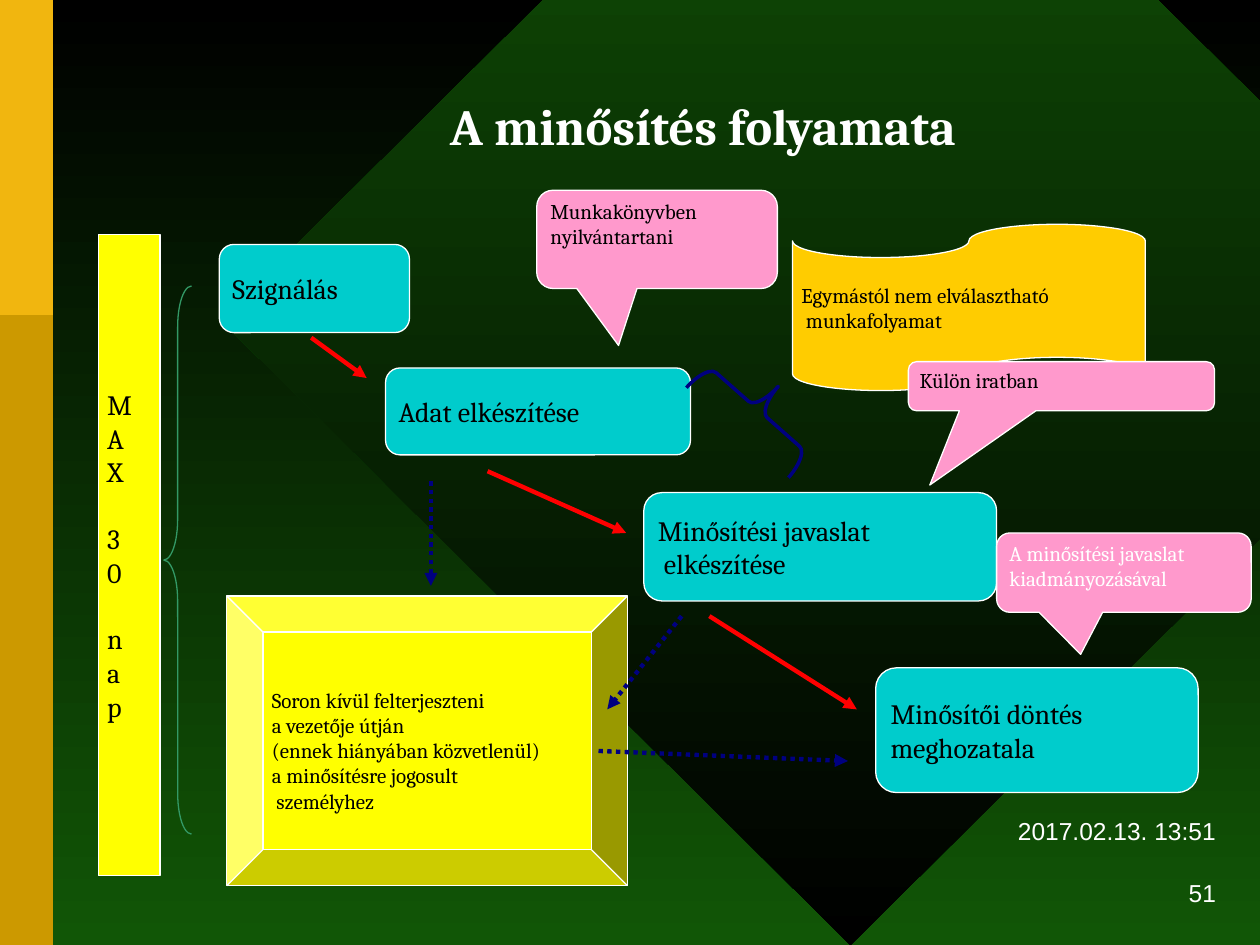
from lxml import etree
from pptx import Presentation
from pptx.dml.color import RGBColor
from pptx.enum.dml import MSO_LINE
from pptx.enum.shapes import MSO_CONNECTOR, MSO_SHAPE as Kind
from pptx.enum.text import MSO_ANCHOR as Anchor, PP_ALIGN as Align
from pptx.oxml.ns import qn
from pptx.util import Inches, Pt

COLORS = {
    "white": "FFFFFF", "black": "000000", "green": "115606",
    "ochre": "CC9900", "amber": "F1B60F", "teal": "00CCCC",
    "yellow": "FFFF00", "gold": "FFCC00", "pink": "FF99CC",
    "red": "FF0000", "navy": "000080", "brace": "339966",
}


def rgb(name):
    return RGBColor.from_string(COLORS[name])


def fill_gradient(fill, top, bottom):
    fill.gradient()
    fill.gradient_angle = 270
    for stop, color in zip(fill.gradient_stops, (top, bottom)):
        stop.color.rgb = rgb(color)


def add_box(slide, kind, box, fill=None, line=None, width=0.75, adjustments=()):
    shape = slide.shapes.add_shape(kind, *map(Inches, box))
    shape.shadow.inherit = False
    if fill:
        shape.fill.solid()
        shape.fill.fore_color.rgb = rgb(fill)
    else:
        shape.fill.background()
    if line:
        shape.line.color.rgb = rgb(line)
        shape.line.width = Pt(width)
    else:
        shape.line.fill.background()
    for index, value in enumerate(adjustments):
        shape.adjustments[index] = value
    return shape


def write_text(shape, lines, size, color="black", font="Cambria", bold=False,
               align=Align.LEFT, anchor=Anchor.MIDDLE, wrap=False, margins=(0.07, 0.03)):
    """Write one paragraph for each line, with the same format throughout."""
    frame = shape.text_frame
    frame.word_wrap = wrap
    frame.vertical_anchor = anchor
    frame.margin_left = frame.margin_right = Inches(margins[0])
    frame.margin_top = frame.margin_bottom = Inches(margins[1])
    for index, line in enumerate(lines):
        paragraph = frame.add_paragraph() if index else frame.paragraphs[0]
        paragraph.alignment = align
        run = paragraph.add_run()
        run.text = line
        run.font.size = Pt(size)
        run.font.name = font
        run.font.bold = bold
        run.font.color.rgb = rgb(color)
    return frame


def add_backdrop(slide, width, height):
    fill_gradient(slide.background.fill, "black", "green")
    diamond = add_box(slide, Kind.DIAMOND, (1.75, -2.42, width, 9.92))
    fill_gradient(diamond.fill, "green", "black")
    add_box(slide, Kind.RECTANGLE, (0, 0, 0.42, height), "ochre")
    add_box(slide, Kind.RECTANGLE, (0, 0, 0.42, height / 3), "amber")


def add_title(slide, box, text):
    title = slide.shapes.title
    title.left, title.top, title.width, title.height = map(Inches, box)
    write_text(title, [text], 29, "white", bold=True, align=Align.CENTER, wrap=True)
    title.element.getparent().append(title.element)  # in front of the backdrop


def add_footer(slide, box, text):
    footer = slide.shapes.add_textbox(*map(Inches, box))
    write_text(footer, [text], 14, "white", "Arial", align=Align.RIGHT,
               anchor=Anchor.BOTTOM, margins=(0.1, 0.05))


def add_step(slide, box, lines):
    step = add_box(slide, Kind.FLOWCHART_ALTERNATE_PROCESS, box, "teal", "white")
    write_text(step, lines, 16)


def add_arrow(slide, start, end, color, dash=None):
    arrow = slide.shapes.add_connector(
        MSO_CONNECTOR.STRAIGHT, *map(Inches, start + end))
    arrow.line.color.rgb = rgb(color)
    arrow.line.width = Pt(2.5)
    if dash:
        arrow.line.dash_style = dash
    line = arrow.line._get_or_add_ln()
    etree.SubElement(line, qn("a:tailEnd"), type="triangle")
    etree.SubElement(arrow.element.spPr, qn("a:effectLst"))


def add_callout(slide, box, pointer, lines, color="black"):
    callout = add_box(slide, Kind.ROUNDED_RECTANGULAR_CALLOUT, box, "pink", "white",
                      adjustments=(*pointer, 0.167))
    write_text(callout, lines, 12, color, anchor=Anchor.TOP, wrap=True)


def add_tape(slide, box, lines):
    tape = add_box(slide, Kind.FLOWCHART_PUNCHED_TAPE, box, "gold", "white")
    write_text(tape, lines, 12)


def add_deadline(slide, box, words):
    """Vertical bar with one letter a line and a gap before each later word."""
    bar = add_box(slide, Kind.FLOWCHART_PROCESS, box, "yellow", "white")
    frame = write_text(bar, "".join(words), 16)
    position = 0
    for word in words[:-1]:
        position += len(word)
        frame.paragraphs[position].space_before = Pt(19)


def add_escalation(slide, box, lines):
    bevel = add_box(slide, Kind.BEVEL, box, "yellow", "white", adjustments=(0.125,))
    frame = write_text(bevel, lines, 12)
    frame.margin_top = Inches(0.18)


def main():
    presentation = Presentation()
    presentation.slide_width, presentation.slide_height = Inches(10), Inches(7.5)
    slide = presentation.slides.add_slide(presentation.slide_layouts[5])

    add_backdrop(slide, 10, 7.5)
    add_footer(slide, (7.25, 6.43, 2.5, 0.33), "2017.02.13. 13:51")
    add_footer(slide, (7.25, 7, 2.5, 0.25), "51")
    add_title(slide, (1.62, 0.54, 7.92, 0.9), "A minősítés folyamata")

    for box, lines in (
        ((1.74, 1.94, 1.51, 0.7), ["Szignálás"]),
        ((3.06, 2.92, 2.42, 0.69), ["Adat elkészítése"]),
        ((5.11, 3.91, 2.8, 0.86), ["Minősítési javaslat", " elkészítése"]),
        ((6.95, 5.3, 2.56, 0.99), ["Minősítői döntés", "meghozatala"]),
    ):
        add_step(slide, box, lines)

    for start, end in (
        ((2.47, 2.68), (2.91, 3)),
        ((3.87, 3.74), (4.97, 4.23)),
        ((5.63, 4.89), (6.8, 5.63)),
    ):
        add_arrow(slide, start, end, "red")

    steps_brace = add_box(slide, Kind.RIGHT_BRACE, (5.77, 2.71, 0.49, 1.08),
                          line="navy", width=2, adjustments=(0.2, 0.5))
    steps_brace.rotation = 311.4
    add_tape(slide, (6.29, 1.78, 2.8, 1.32),
             ["Egymástól nem elválasztható", " munkafolyamat"])
    add_box(slide, Kind.LEFT_BRACE, (1.3, 2.27, 0.22, 4.35),
            line="brace", adjustments=(1.47, 0.5))
    add_deadline(slide, (0.78, 1.86, 0.49, 5.09), ("MAX", "30", "nap"))
    add_escalation(slide, (1.8, 4.73, 3.18, 2.3), [
        "Soron kívül felterjeszteni", "a vezetője útján",
        "(ennek hiányában közvetlenül)", "a minősítésre jogosult", " személyhez"])

    add_callout(slide, (7.21, 2.87, 2.43, 0.39), (-0.43, 2.01), ["Külön iratban"])
    add_callout(slide, (4.26, 1.51, 1.91, 0.78), (-0.16, 1.08),
                ["Munkakönyvben", "nyilvántartani"])
    for start, end in (
        ((4.75, 5.96), (6.73, 6.04)),
        ((3.42, 3.82), (3.42, 4.65)),
        ((5.41, 4.89), (4.82, 5.63)),
    ):
        add_arrow(slide, start, end, "navy", MSO_LINE.ROUND_DOT)
    add_callout(slide, (7.91, 4.23, 2.02, 0.63), (-0.17, 1.03),
                ["A minősítési javaslat kiadmányozásával"], "white")

    presentation.save("out.pptx")


if __name__ == "__main__":
    main()
